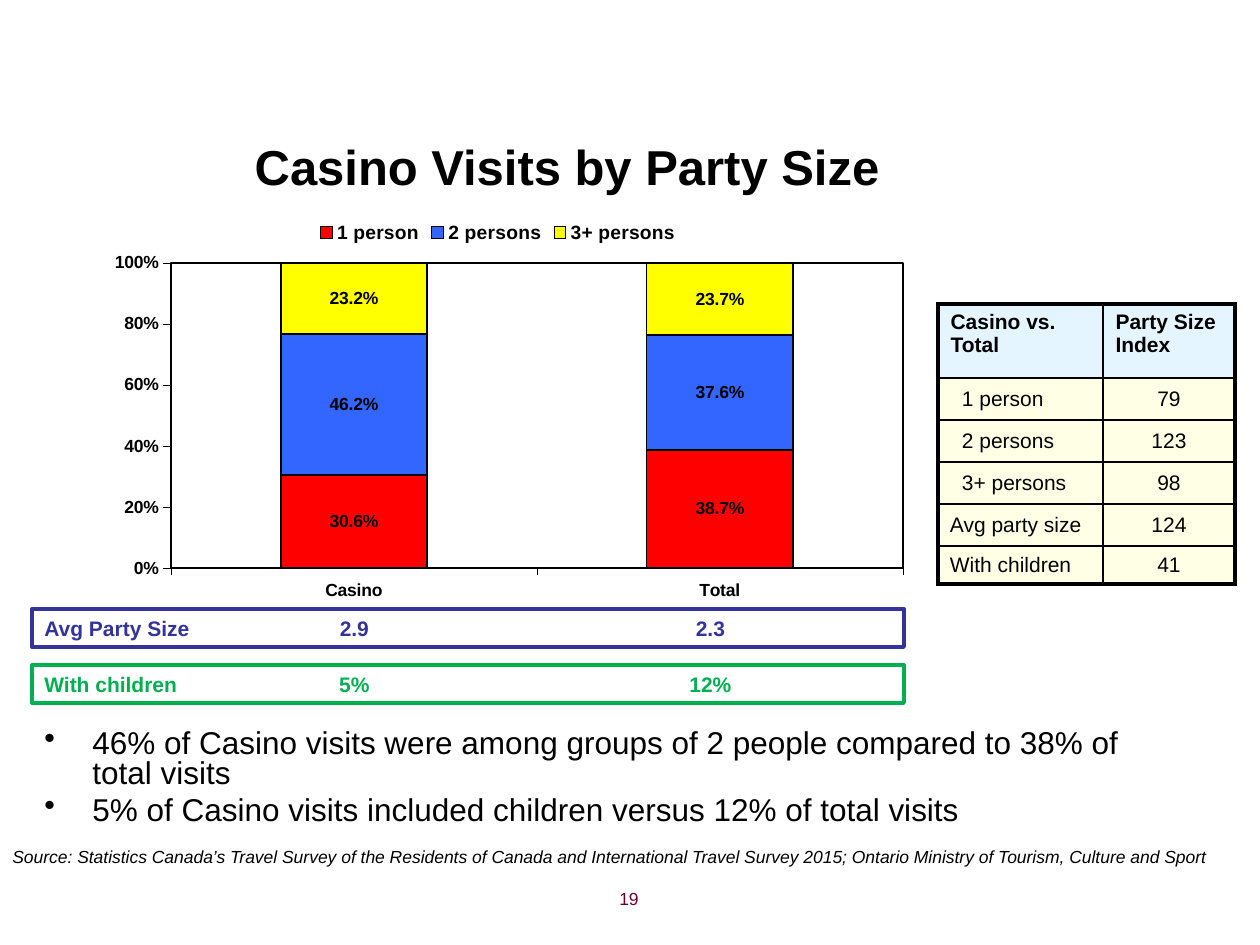
import lxml.etree
import pptx
import pptx.chart.data
import pptx.dml.color
import pptx.enum.chart
import pptx.enum.shapes
import pptx.enum.text
import pptx.oxml.ns
import pptx.util
from dataclasses import dataclass

PX = 914400 / 126
qn = pptx.oxml.ns.qn
ALIGN = pptx.enum.text.PP_ALIGN
ANCHOR = pptx.enum.text.MSO_ANCHOR


@dataclass(frozen=True)
class Theme:
    face: str = "Arial"
    black: str = "000000"
    header: str = "CCECFF"
    body: str = "FFFFCC"
    party: str = "333399"
    children: str = "00B050"
    number: str = "660033"
    series: tuple = ("FF0000", "3366FF", "FFFF00")
    title_size: float = 28
    bullet_size: float = 18
    table_size: float = 12
    legend_size: float = 11
    small_size: float = 10


theme = Theme()


def px(length):
    return pptx.util.Emu(round(length * PX))


def style(font, size, color=theme.black, bold=False, italic=False):
    font.name = theme.face
    font.size = pptx.util.Pt(size)
    font.bold = bold
    font.italic = italic
    font.color.rgb = pptx.dml.color.RGBColor.from_string(color)


deck = pptx.Presentation()
deck.slide_width, deck.slide_height = px(1260), px(945)
page = deck.slides.add_slide(deck.slide_layouts[6])

lines = [
    ("Casino Visits by Party Size", (0, 122, 1134, 87), ALIGN.CENTER, ANCHOR.MIDDLE,
     (theme.title_size, theme.black, True)),
    ("19", (357, 882, 294, 44), ALIGN.RIGHT, ANCHOR.TOP, (theme.small_size, theme.number)),
    ("Source: Statistics Canada’s Travel Survey of the Residents of Canada and International "
     "Travel Survey 2015; Ontario Ministry of Tourism, Culture and Sport",
     (0, 840, 1235, 34), ALIGN.LEFT, ANCHOR.TOP, (theme.small_size, theme.black, False, True)),
]
for text, place, align, anchor, look in lines:
    box = page.shapes.add_textbox(*map(px, place))
    box.text_frame.word_wrap = True
    box.text_frame.vertical_anchor = anchor
    box.text_frame.text = text
    para = box.text_frame.paragraphs[0]
    para.alignment = align
    style(para.runs[0].font, *look)

box = page.shapes.add_textbox(px(32), px(724), px(1131), px(95))
box.text_frame.word_wrap = True
box.text_frame.text = (
    "46% of Casino visits were among groups of 2 people compared to 38% of total visits\n"
    "5% of Casino visits included children versus 12% of total visits"
)
for index, para in enumerate(box.text_frame.paragraphs):
    properties = para._p.get_or_add_pPr()
    properties.set("marL", str(px(48)))
    properties.set("indent", str(px(-48)))
    lxml.etree.SubElement(properties, qn("a:buChar"), char="•")
    para.line_spacing = 0.8
    if index:
        para.space_before = pptx.util.Pt(4)
    style(para.runs[0].font, theme.bullet_size)

shares = pptx.chart.data.CategoryChartData(number_format="0.0%")
shares.categories = ["Casino", "Total"]
shares.add_series("1 person", (0.306, 0.387))
shares.add_series("2 persons", (0.462, 0.376))
shares.add_series("3+ persons", (0.232, 0.237))
chart = page.shapes.add_chart(
    pptx.enum.chart.XL_CHART_TYPE.COLUMN_STACKED_100,
    px(84), px(207), px(828), px(479), shares,
).chart
style(chart.font, theme.small_size, bold=True)
chart.has_title = False
chart.has_legend = True
chart.legend.position = pptx.enum.chart.XL_LEGEND_POSITION.TOP
chart.legend.include_in_layout = False
style(chart.legend.font, theme.legend_size, bold=True)

for axis in (chart.category_axis, chart.value_axis):
    axis.has_major_gridlines = False
    axis.major_tick_mark = pptx.enum.chart.XL_TICK_MARK.OUTSIDE
    axis.minor_tick_mark = pptx.enum.chart.XL_TICK_MARK.NONE
    axis.format.line.color.rgb = pptx.dml.color.RGBColor.from_string(theme.black)
    axis.format.line.width = pptx.util.Pt(0.25)
    style(axis.tick_labels.font, theme.small_size, bold=True)
chart.value_axis.minimum_scale = 0
chart.value_axis.maximum_scale = 1
chart.value_axis.major_unit = 0.2
chart.value_axis.tick_labels.number_format = "0%"
chart.value_axis.tick_labels.number_format_is_linked = False

plot = chart.plots[0]
plot.gap_width = 150
plot.overlap = 100
plot.vary_by_categories = False
for series, color in zip(plot.series, theme.series):
    series.format.fill.solid()
    series.format.fill.fore_color.rgb = pptx.dml.color.RGBColor.from_string(color)
    series.format.line.color.rgb = pptx.dml.color.RGBColor.from_string(theme.black)
    series.format.line.width = pptx.util.Pt(1)
    labels = series.data_labels
    labels.show_value = True
    labels.number_format = "0.0%"
    labels.number_format_is_linked = False
    style(labels.font, theme.small_size, bold=True)

plot_area = chart._chartSpace.find(".//" + qn("c:plotArea"))
for old in plot_area.findall(qn("c:layout")):
    plot_area.remove(old)
layout = lxml.etree.Element(qn("c:layout"))
manual = lxml.etree.SubElement(layout, qn("c:manualLayout"))
for tag, value in (("layoutTarget", "inner"), ("xMode", "edge"), ("yMode", "edge"),
                   ("x", "0.105"), ("y", "0.117"), ("w", "0.884"), ("h", "0.637")):
    lxml.etree.SubElement(manual, qn("c:" + tag), val=value)
plot_area.insert(0, layout)
frame = lxml.etree.SubElement(plot_area, qn("c:spPr"))
lxml.etree.SubElement(frame, qn("a:noFill"))
outline = lxml.etree.SubElement(frame, qn("a:ln"), w=str(pptx.util.Pt(1)))
paint = lxml.etree.SubElement(outline, qn("a:solidFill"))
lxml.etree.SubElement(paint, qn("a:srgbClr"), val=theme.black)

rows = [
    ("Casino vs. Total", "Party Size Index"),
    ("1 person", "79"),
    ("2 persons", "123"),
    ("3+ persons", "98"),
    ("Avg party size", "124"),
    ("With children", "41"),
]
heights = [74, 42, 42, 42, 42, 38]
table = page.shapes.add_table(len(rows), 2, px(938), px(304), px(297), px(sum(heights))).table
table.first_row = table.horz_banding = False
for column, width in zip(table.columns, (165, 132)):
    column.width = px(width)
for r, (texts, height) in enumerate(zip(rows, heights)):
    table.rows[r].height = px(height)
    heading = r == 0
    for c, text in enumerate(texts):
        cell = table.cell(r, c)
        cell.text = text
        para = cell.text_frame.paragraphs[0]
        style(para.runs[0].font, theme.table_size, bold=heading)
        if not heading:
            cell.vertical_anchor = ANCHOR.MIDDLE
            cell.margin_left = px(0 if c else 24 if r < 4 else 12)
            cell.margin_right = cell.margin_top = cell.margin_bottom = 0
            para.alignment = ALIGN.CENTER if c else ALIGN.LEFT
        cell.fill.solid()
        cell.fill.fore_color.rgb = pptx.dml.color.RGBColor.from_string(
            theme.header if heading else theme.body)
        properties = cell._tc.get_or_add_tcPr()
        tint = properties.find(".//" + qn("a:srgbClr"))
        lxml.etree.SubElement(tint, qn("a:alpha"), val="50000")
        edges = (("L", c == 0), ("R", c == 1), ("T", heading), ("B", r == len(rows) - 1))
        for position, (side, outer) in enumerate(edges):
            weight = pptx.util.Pt(2.25 if outer else 1)
            border = lxml.etree.Element(qn("a:ln" + side), w=str(weight))
            paint = lxml.etree.SubElement(border, qn("a:solidFill"))
            lxml.etree.SubElement(paint, qn("a:srgbClr"), val=theme.black)
            properties.insert(position, border)

bars = [
    ("Avg Party Size\t2.9\t2.3", 609, theme.party),
    ("With children\t5%\t12%", 665, theme.children),
]
for text, top, color in bars:
    bar = page.shapes.add_shape(
        pptx.enum.shapes.MSO_SHAPE.RECTANGLE, px(32), px(top), px(872), px(38))
    bar.shadow.inherit = False
    bar.fill.background()
    bar.line.color.rgb = pptx.dml.color.RGBColor.from_string(color)
    bar.line.width = pptx.util.Pt(2.25)
    bar.text_frame.vertical_anchor = ANCHOR.MIDDLE
    bar.text_frame.text = text
    para = bar.text_frame.paragraphs[0]
    para.alignment = ALIGN.LEFT
    tabs = lxml.etree.SubElement(para._p.get_or_add_pPr(), qn("a:tabLst"))
    for stop in (310, 666):
        lxml.etree.SubElement(tabs, qn("a:tab"), pos=str(px(stop)), algn="ctr")
    for span in para.runs:
        style(span.font, theme.table_size, color, bold=True)

deck.save("out.pptx")
